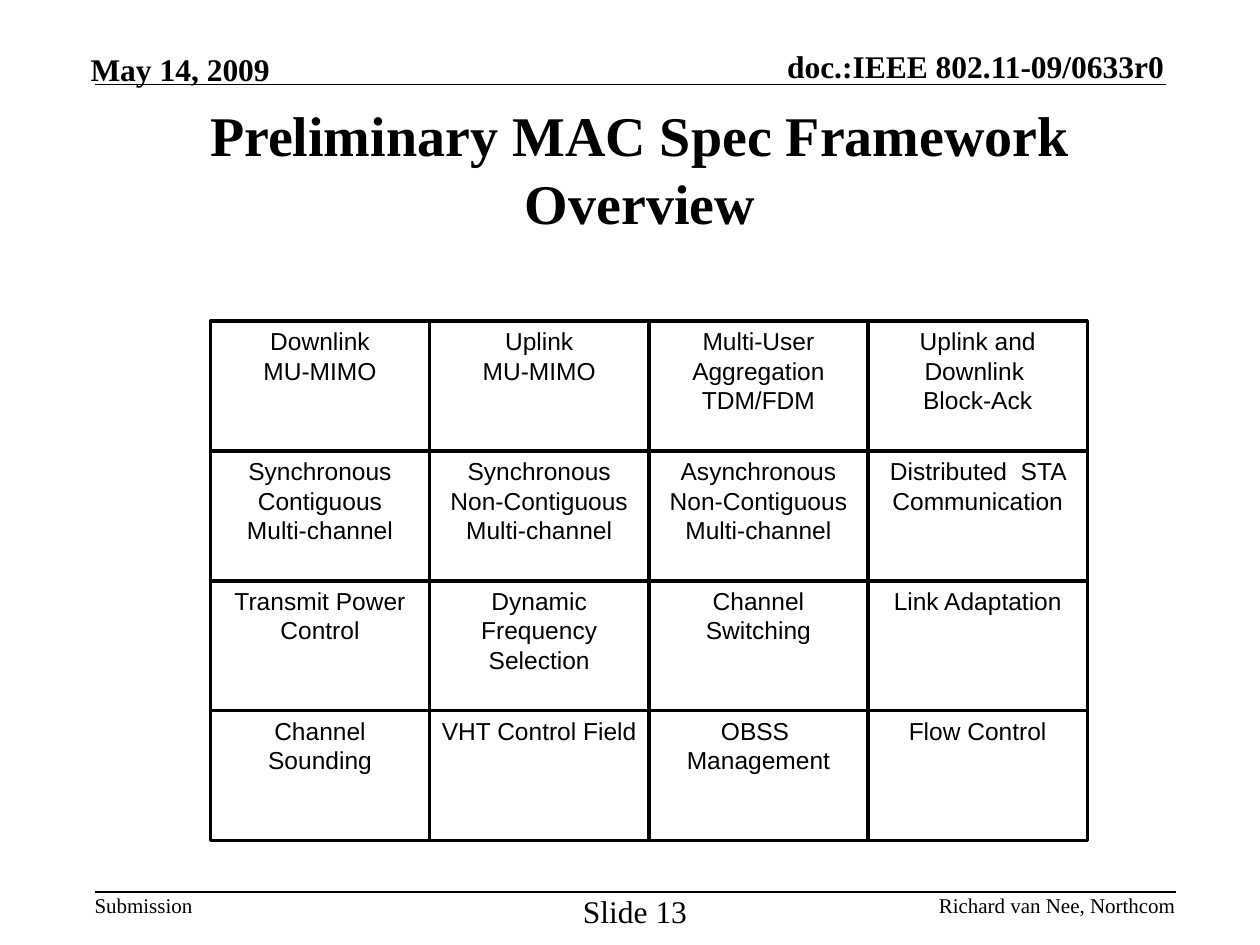
from dataclasses import dataclass

from lxml.etree import SubElement
from pptx import Presentation
from pptx.dml.color import RGBColor
from pptx.enum.shapes import MSO_CONNECTOR, MSO_SHAPE
from pptx.enum.text import MSO_ANCHOR, PP_ALIGN
from pptx.oxml.ns import qn
from pptx.slide import Slide
from pptx.text.text import TextFrame
from pptx.util import Inches, Pt

BLACK = RGBColor(0, 0, 0)
WHITE = RGBColor(255, 255, 255)
SERIF = "Times New Roman"
SANS = "Arial"

GRID_LEFT, GRID_TOP = 1.67, 2.55
CELL_WIDTH, CELL_HEIGHT = 1.74, 1.03


@dataclass(frozen=True)
class Label:
    text: str
    left: float
    top: float
    width: float
    height: float
    size: int
    bold: bool = False
    align: PP_ALIGN = PP_ALIGN.LEFT
    anchor: MSO_ANCHOR = MSO_ANCHOR.TOP
    margins: tuple[float, float] = (0, 0)
    wrap: bool = False


@dataclass(frozen=True)
class Rule:
    left: float
    right: float
    height: float


LABELS = (
    Label("doc.:IEEE 802.11-09/0633r0", 5.73, 0.37, 3.51, 0.3, 18, True,
          PP_ALIGN.RIGHT, MSO_ANCHOR.BOTTOM),
    Label("Submission", 0.75, 7.08, 0.78, 0.2, 12),
    Label("Richard van Nee, Northcom", 7.38, 7.08, 1.95, 0.2, 12, align=PP_ALIGN.RIGHT),
    Label("May 14, 2009", 0.62, 0.35, 1.62, 0.4, 18, True, margins=(0.1, 0.05)),
    Label("Preliminary MAC Spec Framework Overview", 0.83, 0.75, 8.5, 1.17, 32, True,
          PP_ALIGN.CENTER, MSO_ANCHOR.MIDDLE, (0.1, 0.05), True),
    Label("Slide 13", 4.54, 7.08, 1, 0.3, 18, align=PP_ALIGN.CENTER),
)

RULES = (Rule(0.75, 9.25, 0.67), Rule(0.75, 9.33, 7.08))

FEATURES = (
    ("Downlink\nMU-MIMO", "Uplink\nMU-MIMO",
     "Multi-User\nAggregation\nTDM/FDM", "Uplink and Downlink \nBlock-Ack"),
    ("Synchronous\nContiguous\nMulti-channel", "Synchronous\nNon-Contiguous\nMulti-channel",
     "Asynchronous\nNon-Contiguous\nMulti-channel", "Distributed  STA Communication"),
    ("Transmit Power Control", "Dynamic Frequency\nSelection",
     "Channel Switching", "Link Adaptation"),
    ("Channel Sounding", "VHT Control Field", "OBSS \nManagement", "Flow Control"),
)


def write_text(frame: TextFrame, text: str, font_name: str, size: int, bold: bool,
               align: PP_ALIGN, anchor: MSO_ANCHOR, margins: tuple[float, float],
               wrap: bool) -> None:
    """Fill a text frame and format all of its paragraphs."""
    side, end = (Inches(margin) for margin in margins)
    frame_format = {
        "margin_left": side, "margin_right": side,
        "margin_top": end, "margin_bottom": end,
        "vertical_anchor": anchor, "word_wrap": wrap,
    }
    for attribute, value in frame_format.items():
        setattr(frame, attribute, value)
    frame.text = text
    font_format = {"name": font_name, "size": Pt(size), "bold": bold}
    for paragraph in frame.paragraphs:
        paragraph.alignment = align
        for run in paragraph.runs:
            for attribute, value in font_format.items():
                setattr(run.font, attribute, value)
            run.font.color.rgb = BLACK


def draw_label(slide: Slide, label: Label) -> None:
    """Place one piece of free text."""
    box = slide.shapes.add_textbox(Inches(label.left), Inches(label.top),
                                   Inches(label.width), Inches(label.height))
    write_text(box.text_frame, label.text, SERIF, label.size, label.bold,
               label.align, label.anchor, label.margins, label.wrap)


def draw_rule(slide: Slide, rule: Rule) -> None:
    """Draw a horizontal header or footer line."""
    line = slide.shapes.add_connector(MSO_CONNECTOR.STRAIGHT,
                                      Inches(rule.left), Inches(rule.height),
                                      Inches(rule.right), Inches(rule.height))
    line.line.color.rgb = BLACK
    line.line.width = Pt(1)
    SubElement(line.element.spPr, qn("a:effectLst"))


def draw_features(slide: Slide) -> None:
    """Draw the grouped grid of framework features."""
    grid = slide.shapes.add_group_shape()
    for row, features in enumerate(FEATURES):
        for column, feature in enumerate(features):
            cell = grid.shapes.add_shape(
                MSO_SHAPE.RECTANGLE,
                Inches(GRID_LEFT + column * CELL_WIDTH),
                Inches(GRID_TOP + row * CELL_HEIGHT),
                Inches(CELL_WIDTH), Inches(CELL_HEIGHT))
            cell.shadow.inherit = False
            cell.fill.solid()
            cell.fill.fore_color.rgb = WHITE
            cell.line.color.rgb = BLACK
            cell.line.width = Pt(2)
            write_text(cell.text_frame, feature, SANS, 14, False, PP_ALIGN.CENTER,
                       MSO_ANCHOR.TOP, (0.09, 0.04), True)


def main() -> None:
    """Build the slide and save it."""
    presentation = Presentation()
    presentation.slide_width = Inches(10)
    presentation.slide_height = Inches(7.5)
    slide = presentation.slides.add_slide(presentation.slide_layouts[6])
    for rule in RULES:
        draw_rule(slide, rule)
    for label in LABELS:
        draw_label(slide, label)
    draw_features(slide)
    presentation.save("out.pptx")


if __name__ == "__main__":
    main()
